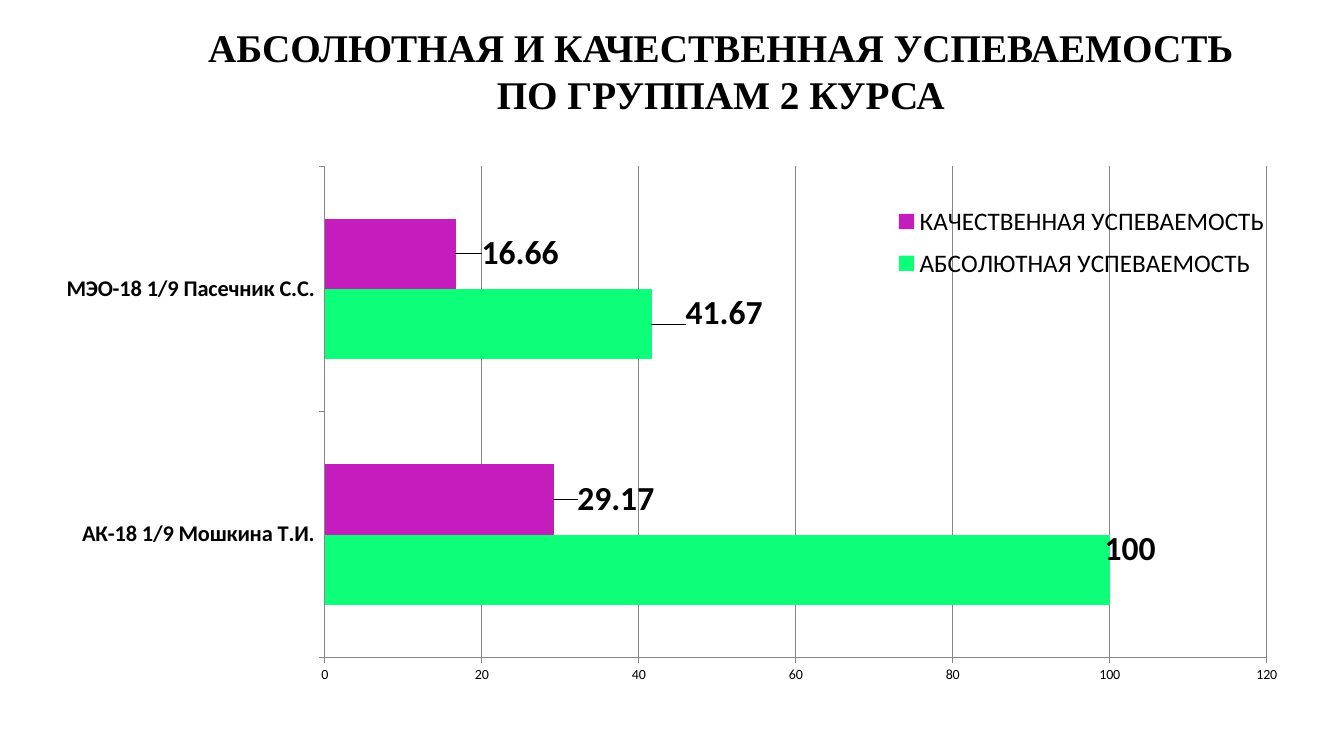
from dataclasses import dataclass

from lxml import etree
from pptx import Presentation
from pptx.chart.data import CategoryChartData
from pptx.dml.color import RGBColor
from pptx.enum.chart import (XL_CHART_TYPE, XL_LABEL_POSITION,
                             XL_LEGEND_POSITION, XL_TICK_MARK)
from pptx.enum.text import MSO_ANCHOR, PP_ALIGN
from pptx.oxml.ns import qn
from pptx.util import Pt

BAR = XL_CHART_TYPE.BAR_CLUSTERED
OUTSIDE_END = XL_LABEL_POSITION.OUTSIDE_END
RIGHT = XL_LEGEND_POSITION.RIGHT
TICK_OUT, TICK_NONE = XL_TICK_MARK.OUTSIDE, XL_TICK_MARK.NONE
TOP, CENTER = MSO_ANCHOR.TOP, PP_ALIGN.CENTER


@dataclass(frozen=True)
class Theme:
    title_font: str = "Times New Roman"
    chart_font: str = "Calibri"
    title_size: int = 28
    label_size: int = 24
    legend_size: int = 18
    category_size: int = 16
    axis_size: int = 10
    text: RGBColor = RGBColor(0, 0, 0)
    grid: RGBColor = RGBColor(0x86, 0x86, 0x86)
    absolute: RGBColor = RGBColor(0x0D, 0xFF, 0x7A)
    quality: RGBColor = RGBColor(0xC5, 0x1D, 0xBD)


THEME = Theme()
TITLE = ["АБСОЛЮТНАЯ И КАЧЕСТВЕННАЯ УСПЕВАЕМОСТЬ", "ПО ГРУППАМ 2 КУРСА"]
GROUPS = ["АК-18 1/9 Мошкина Т.И.", "МЭО-18 1/9 Пасечник С.С."]
# Name, values, colour, label shifts as fractions of the chart
SERIES = [
    ("АБСОЛЮТНАЯ УСПЕВАЕМОСТЬ", (100, 41.67), THEME.absolute,
     ((-0.007, -0.036), (0.023, -0.019))),
    ("КАЧЕСТВЕННАЯ УСПЕВАЕМОСТЬ", (29.17, 16.66), THEME.quality,
     ((0.015, 0), (0.017, 0))),
]


def manual_layout(**values):
    """Return a c:layout element with the given settings in schema order."""
    layout = etree.Element(qn("c:layout"))
    manual = etree.SubElement(layout, qn("c:manualLayout"))
    for name, value in values.items():
        etree.SubElement(manual, qn(f"c:{name}")).set("val", str(value))
    return layout


def set_font(font, size, bold=False, name=THEME.chart_font):
    font.name, font.size, font.bold = name, Pt(size), bold
    font.color.rgb = THEME.text


def add_title(slide, left, top, width, height):
    sp = slide.shapes.title
    sp.left, sp.top, sp.width, sp.height = map(Pt, (left, top, width, height))
    tf = sp.text_frame
    tf.text = "\n".join(TITLE)
    tf.word_wrap = True
    tf.vertical_anchor = TOP
    tf.margin_top = Pt(6)
    for p in tf.paragraphs:
        p.alignment = CENTER
        set_font(p.font, THEME.title_size, True, THEME.title_font)


def style_axes(chart):
    cat, val = chart.category_axis, chart.value_axis
    for axis in (cat, val):
        axis.major_tick_mark, axis.minor_tick_mark = TICK_OUT, TICK_NONE
        axis.format.line.color.rgb = THEME.grid
        axis.format.line.width = Pt(0.75)
    set_font(cat.tick_labels.font, THEME.category_size, True)
    set_font(val.tick_labels.font, THEME.axis_size)
    val.minimum_scale, val.maximum_scale, val.major_unit = 0, 120, 20
    val.has_major_gridlines = True
    grid = val.major_gridlines.format.line
    grid.color.rgb, grid.width = THEME.grid, Pt(0.75)


def style_series(ser, color, shifts):
    ser.format.fill.solid()
    ser.format.fill.fore_color.rgb = color
    ser.invert_if_negative = False
    ser.data_labels.show_value = True
    set_font(ser.data_labels.font, THEME.label_size, True)
    for i, (dx, dy) in enumerate(shifts):
        label = ser.points[i].data_label
        label.position = OUTSIDE_END
        set_font(label.font, THEME.label_size, True)
        idx = ser._element.xpath(f"c:dLbls/c:dLbl/c:idx[@val='{i}']")[0]
        idx.addnext(manual_layout(x=dx, y=dy))


def add_results_chart(slide, left, top, width, height):
    data = CategoryChartData()
    data.categories = GROUPS
    for name, values, _, _ in SERIES:
        data.add_series(name, values)
    chart = slide.shapes.add_chart(
        BAR, Pt(left), Pt(top), Pt(width), Pt(height), data).chart
    chart.has_title = False
    set_font(chart.font, THEME.axis_size)
    style_axes(chart)

    # Bars and their labels
    plot = chart.plots[0]
    plot.gap_width, plot.overlap, plot.vary_by_categories = 150, 0, False
    for ser, (_, _, color, shifts) in zip(plot.series, SERIES):
        style_series(ser, color, shifts)

    # Plot area
    area = chart._chartSpace.xpath("c:chart/c:plotArea")[0]
    for old in area.xpath("c:layout"):
        area.remove(old)
    area.insert(0, manual_layout(layoutTarget="inner", xMode="edge",
                                 yMode="edge", x=0.25, y=0.033,
                                 w=0.725, h=0.891))

    # Legend over the plot
    chart.has_legend = True
    legend = chart.legend
    legend.position, legend.include_in_layout = RIGHT, False
    set_font(legend.font, THEME.legend_size)
    for old in legend._element.xpath("c:layout"):
        legend._element.remove(old)
    legend._element.xpath("c:legendPos")[0].addnext(
        manual_layout(xMode="edge", yMode="edge",
                      x=0.685, y=0.085, w=0.295, h=0.172))


def main():
    prs = Presentation()
    prs.slide_width, prs.slide_height = Pt(960), Pt(540)
    slide = prs.slides.add_slide(prs.slide_layouts[5])
    add_title(slide, 137.5, 10.8, 754.6, 108.7)
    add_results_chart(slide, 0, 105.8, 928.1, 393.8)
    prs.save("out.pptx")


if __name__ == "__main__":
    main()
